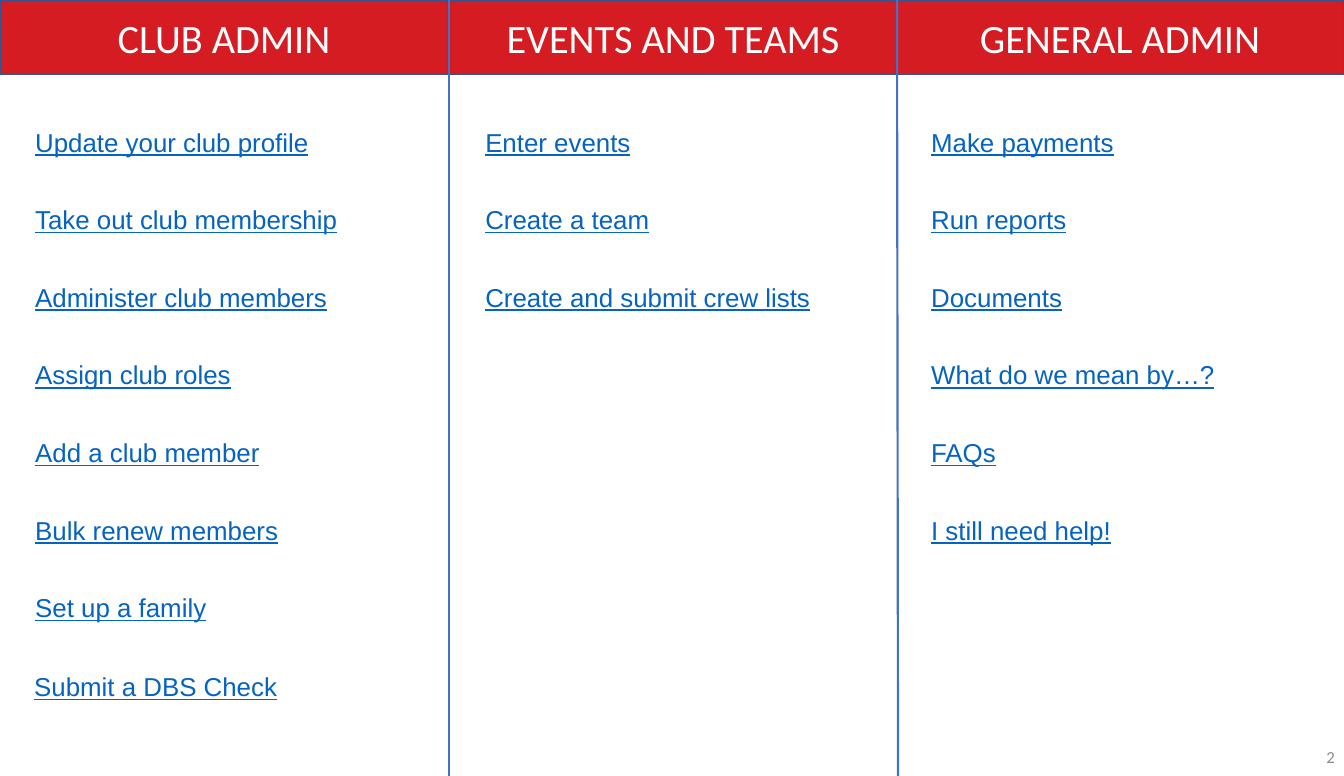
from dataclasses import dataclass

from lxml import etree
from pptx import Presentation
from pptx import util as u
from pptx.dml.color import RGBColor
from pptx.enum import shapes, text
from pptx.oxml.ns import qn

PX = 9144  # EMU per px, 100 px to the inch
WIDTH, HEIGHT = 1299, 750
COLUMN, HEADER = 433, 72
COMPARISON_LAYOUT = 4


@dataclass(frozen=True)
class Theme:
    red: str = "D51C23"
    outline: str = "325491"
    divider: str = "4472C4"
    link: str = "0563C1"
    grey: str = "8C8C8C"
    white: str = "FFFFFF"
    heading_font: str = "Calibri"
    list_font: str = "Arial"
    heading_size: float = 28
    list_size: float = 18
    number_size: float = 11.7


THEME = Theme()

# Heading, left edge and list left edge of each column
COLUMNS = [
    ("CLUB ADMIN", 0, 0),
    ("EVENTS AND TEAMS", 434, 435),
    ("GENERAL ADMIN", 866, 866),
]

# Placeholder index, column, list height and items
LISTS = [
    (1, 0, 527, ["Update your club profile", "Take out club membership",
                 "Administer club members", "Assign club roles",
                 "Add a club member", "Bulk renew members",
                 "Set up a family"]),
    (2, 1, 224, ["Enter events", "Create a team",
                 "Create and submit crew lists"]),
    (3, 2, 451, ["Make payments", "Run reports", "Documents",
                 "What do we mean by…?", "FAQs", "I still need help!"]),
]


def px(*lengths):
    return [u.Emu(n * PX) for n in lengths]


def place(sp, *box):
    sp.left, sp.top, sp.width, sp.height = px(*box)


def style(p, font, size, color, align):
    p.alignment = align
    p.font.name, p.font.size, p.font.bold = font, u.Pt(size), False
    p.font.color.rgb = RGBColor.from_string(color)


def heading(sp, words, left):
    place(sp, left, 0, COLUMN, HEADER)
    sp.fill.solid()
    sp.fill.fore_color.rgb = RGBColor.from_string(THEME.red)
    sp.line.color.rgb = RGBColor.from_string(THEME.outline)
    sp.line.width = u.Pt(1)
    tf = sp.text_frame
    tf.text = words
    tf.vertical_anchor = text.MSO_ANCHOR.MIDDLE
    tf.auto_size = text.MSO_AUTO_SIZE.NONE
    style(tf.paragraphs[0], THEME.heading_font, THEME.heading_size,
          THEME.white, text.PP_ALIGN.CENTER)


def divider(s, top_x, bottom_x):
    line = s.shapes.add_connector(shapes.MSO_CONNECTOR.STRAIGHT,
                                  *px(top_x, 0, bottom_x, HEIGHT))
    line.line.color.rgb = RGBColor.from_string(THEME.divider)
    line.line.width = u.Pt(1.5)
    etree.SubElement(line.element.spPr, qn("a:effectLst"))


def link_list(sp, items, *box, wrap=True):
    place(sp, *box)
    tf = sp.text_frame
    tf.text = "\n".join(items)
    tf.word_wrap = wrap
    tf.vertical_anchor = text.MSO_ANCHOR.TOP
    tf.auto_size = text.MSO_AUTO_SIZE.SHAPE_TO_FIT_TEXT
    for p in tf.paragraphs:
        style(p, THEME.list_font, THEME.list_size, THEME.link,
              text.PP_ALIGN.LEFT)
        p.font.underline = True
        p.line_spacing, p.space_before = 2.5, u.Pt(0)
        # Indent without a bullet
        pPr = p._p.get_or_add_pPr()
        pPr.set("marL", str(24 * PX))
        pPr.set("indent", "0")
        pPr.insert_element_before(etree.Element(qn("a:buNone")),
                                  "a:tabLst", "a:defRPr", "a:extLst")


def page_number(s, number):
    tf = s.shapes.add_textbox(*px(1259, 711, 41, 40)).text_frame
    tf.text = number
    tf.word_wrap = True
    tf.vertical_anchor = text.MSO_ANCHOR.MIDDLE
    style(tf.paragraphs[0], THEME.heading_font, THEME.number_size,
          THEME.grey, text.PP_ALIGN.RIGHT)


def main():
    prs = Presentation()
    prs.slide_width, prs.slide_height = px(WIDTH, HEIGHT)
    s = prs.slides.add_slide(prs.slide_layouts[COMPARISON_LAYOUT])
    holders = {sp.placeholder_format.idx: sp for sp in s.placeholders}

    # Column headings; the first one is the slide title
    for i, (words, left, _) in enumerate(COLUMNS):
        if i == 0:
            sp = s.shapes.title
        else:
            sp = s.shapes.add_shape(shapes.MSO_SHAPE.RECTANGLE,
                                    *px(left, 0, COLUMN, HEADER))
            sp.shadow.inherit = False
        heading(sp, words, left)

    # Column dividers
    divider(s, 434, 434)
    divider(s, 867, 868)

    # Topic lists, with the last club topic set below the first list
    for idx, column, height, items in LISTS:
        link_list(holders[idx], items, COLUMNS[column][2], HEADER,
                  COLUMN, height)
    link_list(holders[4], ["Submit a DBS Check"], -1, 598, 282, 73,
              wrap=False)

    page_number(s, "2")
    prs.save("out.pptx")


if __name__ == "__main__":
    main()
